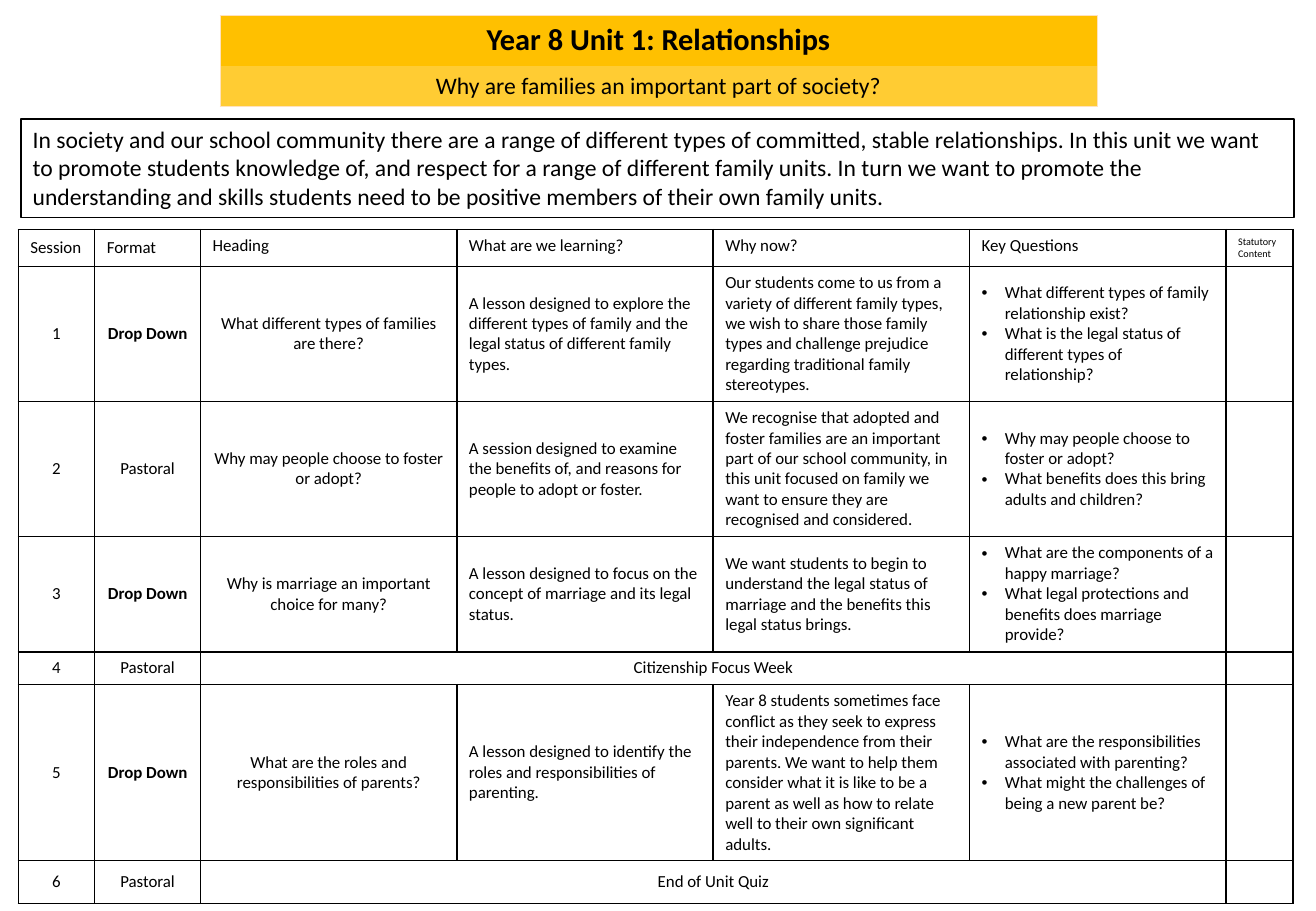
import pptx
import pptx.dml.color
import pptx.enum.shapes
import pptx.enum.text
import pptx.oxml.ns
import pptx.util
from lxml import etree

COLOURS = {"ink": "000000", "paper": "FFFFFF", "amber": "FFC000",
           "gold": "FFCC33", "edge": "FFE2BD"}
ALIGN = pptx.enum.text.PP_ALIGN
ANCHOR = pptx.enum.text.MSO_ANCHOR
EMU_PER_PX = 9144  # 100 px to the inch


def px(length):
    return pptx.util.Emu(length * EMU_PER_PX)


def add_xml(parent, tag, **attributes):
    return etree.SubElement(parent, pptx.oxml.ns.qn(tag), attributes)


class SlideBuilder:
    """Holds the text style and the current slide."""

    def __init__(self, page, font="Calibri"):
        self.page = page
        self.font = font

    def colour(self, name):
        return pptx.dml.color.RGBColor.from_string(COLOURS[name])

    def paint(self, target, name):
        target.fill.solid()
        target.fill.fore_color.rgb = self.colour(name)

    def add_span(self, para, text, size, bold=False, align=ALIGN.LEFT):
        para.alignment = align
        span = para.add_run()
        span.text = text
        span.font.name = self.font
        span.font.size = pptx.util.Pt(size)
        span.font.bold = bold
        span.font.color.rgb = self.colour("ink")

    def bullet(self, para):
        props = para._p.get_or_add_pPr()
        props.set("marL", str(px(19)))
        props.set("indent", str(-px(19)))
        add_xml(props, "a:buFont", typeface="Arial")
        add_xml(props, "a:buChar", char="•")

    def borders(self, cell, sides, name, width):
        """Draw the sides given (of L, R, T, B) and clear the others."""
        props = cell._tc.get_or_add_tcPr()
        for side in "LRTB":
            line = add_xml(props, "a:ln" + side, w=str(pptx.util.Pt(width)))
            if side in sides:
                fill = add_xml(line, "a:solidFill")
                add_xml(fill, "a:srgbClr", val=COLOURS[name])
            else:
                add_xml(line, "a:noFill")

    def table(self, left, top, columns, rows):
        frame = self.page.shapes.add_table(
            len(rows), len(columns), px(left), px(top), px(sum(columns)), px(sum(rows)))
        grid = frame.table
        grid.horz_banding = False
        for column, width in zip(grid.columns, columns):
            column.width = px(width)
        for row, height in zip(grid.rows, rows):
            row.height = px(height)
        return grid

    def cell(self, cell, lines, size, bold=False, align=ALIGN.LEFT,
             anchor=ANCHOR.MIDDLE, bullets=False):
        cell.vertical_anchor = anchor
        frame = cell.text_frame
        for index, text in enumerate(lines):
            para = frame.add_paragraph() if index else frame.paragraphs[0]
            self.add_span(para, text, size, bold, align)
            if bullets:
                self.bullet(para)
        if not lines:  # keeps an empty cell from stretching its row
            add_xml(frame.paragraphs[0]._p, "a:endParaRPr", sz=str(size * 100))

    def text_box(self, left, top, width, height, text, size):
        box = self.page.shapes.add_shape(
            pptx.enum.shapes.MSO_SHAPE.RECTANGLE, px(left), px(top), px(width), px(height))
        box.shadow.inherit = False
        self.paint(box, "paper")
        box.line.color.rgb = self.colour("ink")
        box.line.width = pptx.util.Pt(1)
        box.text_frame.word_wrap = True
        box.text_frame.vertical_anchor = ANCHOR.TOP
        self.add_span(box.text_frame.paragraphs[0], text, size)


BANNER = [
    # text, size, bold, fill, drawn sides
    ("Year 8 Unit 1: Relationships", 18, True, "amber", "LRT"),
    ("Why are families an important part of society?", 14, False, "gold", "LRB"),
]

INTRO = (
    "In society and our school community there are a range of different types of "
    "committed, stable relationships. In this unit we want to promote students knowledge "
    "of, and respect for a range of different family units. In turn we want to promote the "
    "understanding and skills students need to be positive members of their own family units.")

HEADERS = ["Session", "Format", "Heading", "What are we learning?", "Why now?",
           "Key Questions", "Statutory Content"]

# Format, heading, learning, why now, key questions; a short row spans the middle
SESSIONS = [
    ("Drop Down", "What different types of families are there?",
     "A lesson designed to explore the different types of family and the legal status of "
     "different family types.",
     "Our students come to us from a variety of different family types, we wish to share "
     "those family types and challenge prejudice regarding traditional family stereotypes.",
     ["What different types of family relationship exist?",
      "What is the legal status of different types of relationship?"]),
    ("Pastoral", "Why may people choose to foster or adopt?",
     "A session designed to examine the benefits of, and reasons for people to adopt or "
     "foster.",
     "We recognise that adopted and foster families are an important part of our school "
     "community, in this unit focused on family we want to ensure they are recognised and "
     "considered.",
     ["Why may people choose to foster or adopt?",
      "What benefits does this bring adults and children?"]),
    ("Drop Down", "Why is marriage an important choice for many?",
     "A lesson designed to focus on the concept of marriage and its legal status.",
     "We want students to begin to understand the legal status of marriage and the "
     "benefits this legal status brings.",
     ["What are the components of a happy marriage?",
      "What legal protections and benefits does marriage provide?"]),
    ("Pastoral", "Citizenship Focus Week"),
    ("Drop Down", "What are the roles and responsibilities of parents?",
     "A lesson designed to identify the roles and responsibilities of parenting.",
     "Year 8 students sometimes face conflict as they seek to express their independence "
     "from their parents. We want to help them consider what it is like to be a parent as "
     "well as how to relate well to their own significant adults.",
     ["What are the responsibilities associated with parenting?",
      "What might the challenges of being a new parent be?"]),
    ("Pastoral", "End of Unit Quiz"),
]


def main():
    deck = pptx.Presentation()
    deck.slide_width, deck.slide_height = px(1083), px(750)
    builder = SlideBuilder(deck.slides.add_slide(deck.slide_layouts[6]))

    # Title banner
    banner = builder.table(181, 13, [722], [41, 33])
    for row, (text, size, bold, fill, sides) in enumerate(BANNER):
        cell = banner.cell(row, 0)
        builder.borders(cell, sides, "edge", 0.5)
        builder.paint(cell, fill)
        builder.cell(cell, [text], size, bold, ALIGN.CENTER, ANCHOR.TOP)

    # Session table
    plan = builder.table(15, 189, [63, 87] + [211] * 4 + [55],
                         [30, 111, 111, 95, 27, 145, 35])
    for cell in plan.iter_cells():
        builder.borders(cell, "LRTB", "ink", 1)
        builder.paint(cell, "paper")

    for column, header in enumerate(HEADERS):
        builder.cell(plan.cell(0, column), [header], 6 if column == 6 else 10,
                     anchor=ANCHOR.MIDDLE if column < 2 else ANCHOR.TOP)

    for number, (style, *details) in enumerate(SESSIONS, start=1):
        if len(details) == 1:
            plan.cell(number, 2).merge(plan.cell(number, 5))
        texts = [str(number), style, *details]
        for column in range(len(HEADERS)):
            content = texts[column] if column < len(texts) else []
            bullets = isinstance(content, list)
            builder.cell(plan.cell(number, column), content if bullets else [content], 10,
                         bold=content == "Drop Down", bullets=bullets,
                         align=ALIGN.CENTER if column < 3 else ALIGN.LEFT)

    # Unit introduction
    builder.text_box(17, 98, 1048, 81, INTRO, 14)

    deck.save("out.pptx")


if __name__ == "__main__":
    main()
